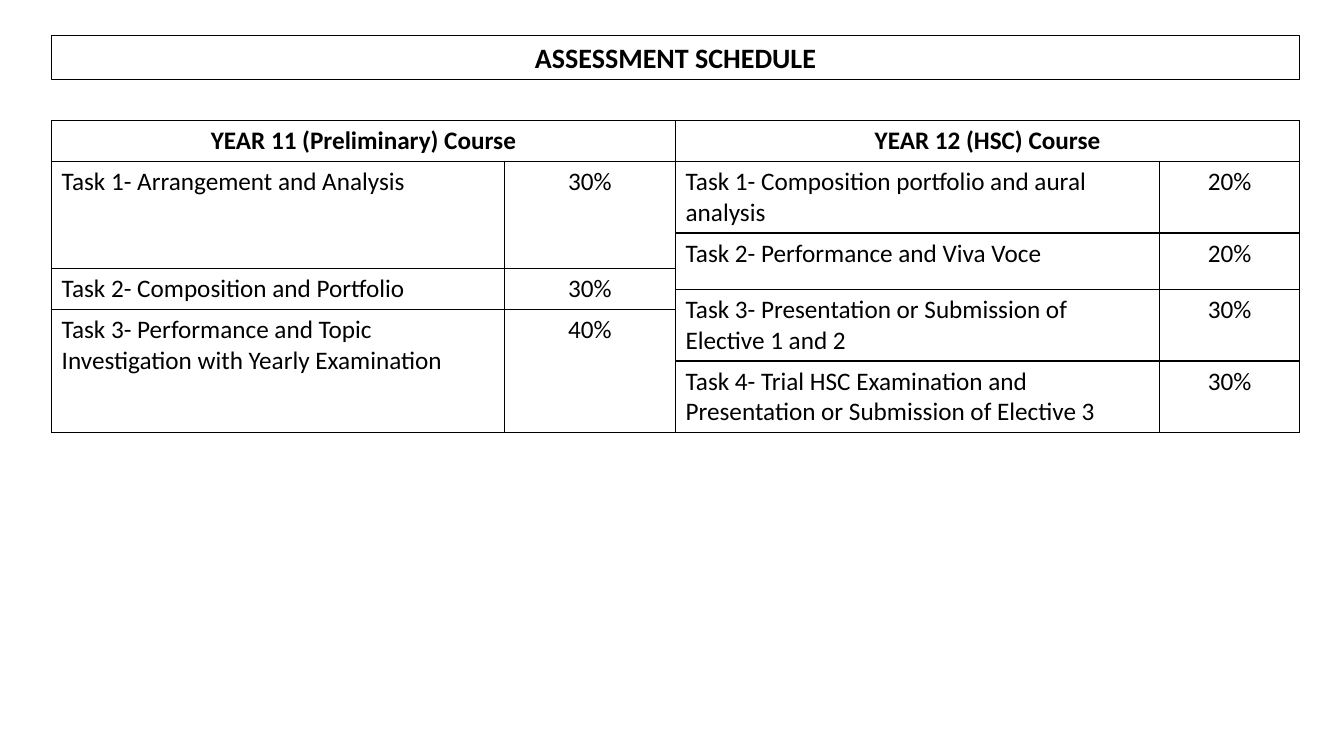
from lxml import etree
from pptx import Presentation
from pptx.dml.color import RGBColor
from pptx.enum.shapes import MSO_SHAPE
from pptx.enum.text import MSO_ANCHOR, PP_ALIGN
from pptx.oxml.ns import qn
from pptx.util import Pt

LEFT, CENTER = PP_ALIGN.LEFT, PP_ALIGN.CENTER
TOP, MIDDLE = MSO_ANCHOR.TOP, MSO_ANCHOR.MIDDLE
RECTANGLE = MSO_SHAPE.RECTANGLE

COLORS = {"ink": "000000", "paper": "FFFFFF"}
FONT = "Calibri"
TITLE = "ASSESSMENT SCHEDULE"

# Each task: first row, rows spanned, description, weight
COURSES = [
    ("YEAR 11 (Preliminary) Course", [
        (1, 2, "Task 1- Arrangement and Analysis", "30%"),
        (3, 2, "Task 2- Composition and Portfolio", "30%"),
        (5, 2, "Task 3- Performance and Topic Investigation with Yearly Examination", "40%"),
    ]),
    ("YEAR 12 (HSC) Course", [
        (1, 1, "Task 1- Composition portfolio and aural analysis", "20%"),
        (2, 2, "Task 2- Performance and Viva Voce", "20%"),
        (4, 2, "Task 3- Presentation or Submission of Elective 1 and 2", "30%"),
        (6, 1, "Task 4- Trial HSC Examination and Presentation or Submission of Elective 3", "30%"),
    ]),
]

SLIDE_W, SLIDE_H = 960, 540
MARGIN = 36.9
TITLE_TOP, TITLE_H = 25, 31.5
TABLE_TOP = 86
COL_WIDTHS = [323.2, 122.5, 345.6, 100.2]
ROW_HEIGHTS = [29.2, 51.2, 25.4, 14.9, 14.5, 36.5, 51.2]
TABLE_W, TABLE_H = sum(COL_WIDTHS), sum(ROW_HEIGHTS)


def rgb(name):
    return RGBColor.from_string(COLORS[name])


def write(tf, text, size, align, bold=False):
    tf.text = text
    p = tf.paragraphs[0]
    p.alignment = align
    font = p.runs[0].font
    font.name, font.size, font.bold = FONT, Pt(size), bold
    font.color.rgb = rgb("ink")


def add_borders(cell, width=1):
    """Outline all four sides; border elements must precede the cell fill."""
    tc_pr = cell._tc.get_or_add_tcPr()
    for i, side in enumerate(("a:lnL", "a:lnR", "a:lnT", "a:lnB")):
        ln = etree.Element(qn(side), w=str(Pt(width)))
        fill = etree.SubElement(ln, qn("a:solidFill"))
        etree.SubElement(fill, qn("a:srgbClr"), val=COLORS["ink"])
        tc_pr.insert(i, ln)


def add_title(s):
    box = s.shapes.add_shape(RECTANGLE, Pt(MARGIN), Pt(TITLE_TOP), Pt(TABLE_W), Pt(TITLE_H))
    box.shadow.inherit = False
    box.fill.background()
    box.line.color.rgb = rgb("ink")
    box.line.width = Pt(0.25)
    tf = box.text_frame
    tf.word_wrap = True
    tf.vertical_anchor = MIDDLE
    write(tf, TITLE, 20, CENTER, bold=True)


def add_schedule(s):
    table = s.shapes.add_table(len(ROW_HEIGHTS), len(COL_WIDTHS), Pt(MARGIN), Pt(TABLE_TOP),
                               Pt(TABLE_W), Pt(TABLE_H)).table
    table.horz_banding = False
    table.first_row = False
    for column, width in zip(table.columns, COL_WIDTHS):
        column.width = Pt(width)
    for row, height in zip(table.rows, ROW_HEIGHTS):
        row.height = Pt(height)
    for cell in table.iter_cells():
        cell.fill.solid()
        cell.fill.fore_color.rgb = rgb("paper")
        cell.vertical_anchor = TOP
        add_borders(cell)

    for i, (course, tasks) in enumerate(COURSES):
        col = 2 * i
        heading = table.cell(0, col)
        heading.merge(table.cell(0, col + 1))
        write(heading.text_frame, course, 18, CENTER, bold=True)
        for row, span, task, weight in tasks:
            for c, text, align in ((col, task, LEFT), (col + 1, weight, CENTER)):
                cell = table.cell(row, c)
                if span > 1:
                    cell.merge(table.cell(row + span - 1, c))
                write(cell.text_frame, text, 18, align)


def main():
    prs = Presentation()
    prs.slide_width, prs.slide_height = Pt(SLIDE_W), Pt(SLIDE_H)
    s = prs.slides.add_slide(prs.slide_layouts[6])
    add_schedule(s)
    add_title(s)
    prs.save("out.pptx")


if __name__ == "__main__":
    main()
